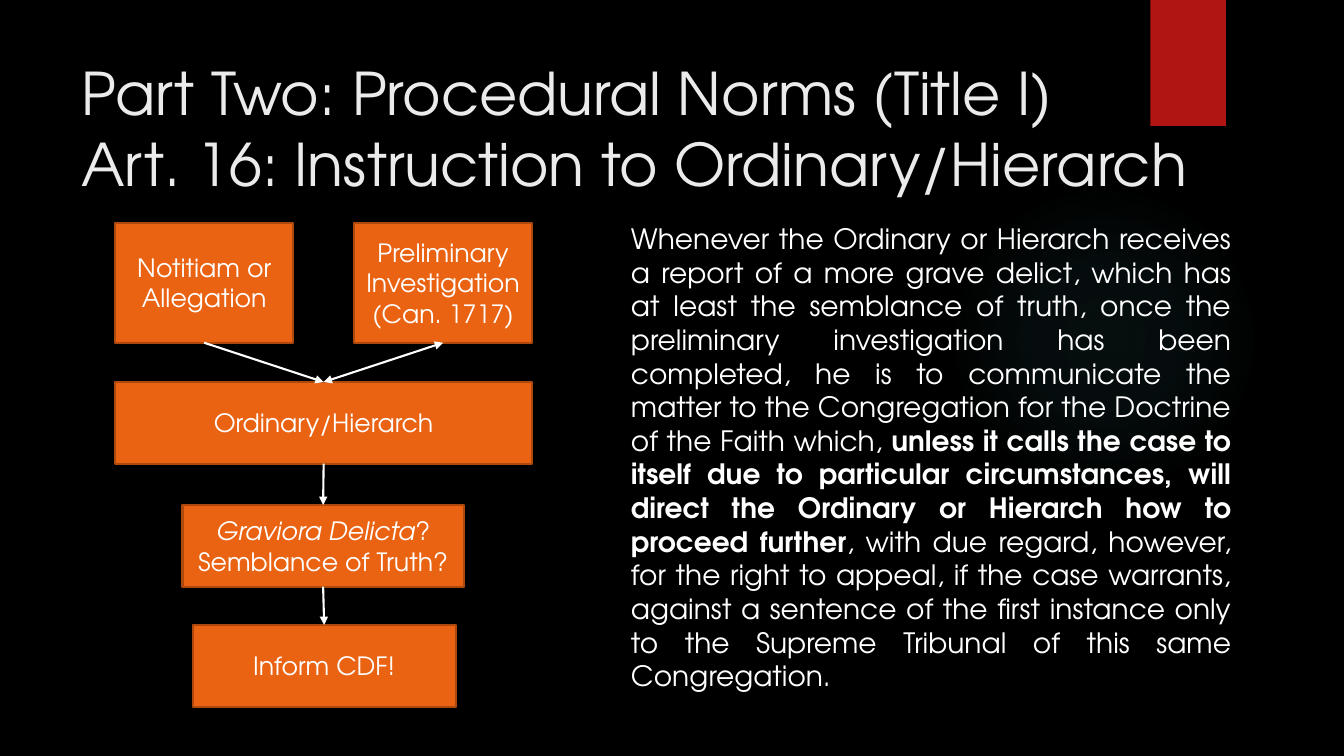
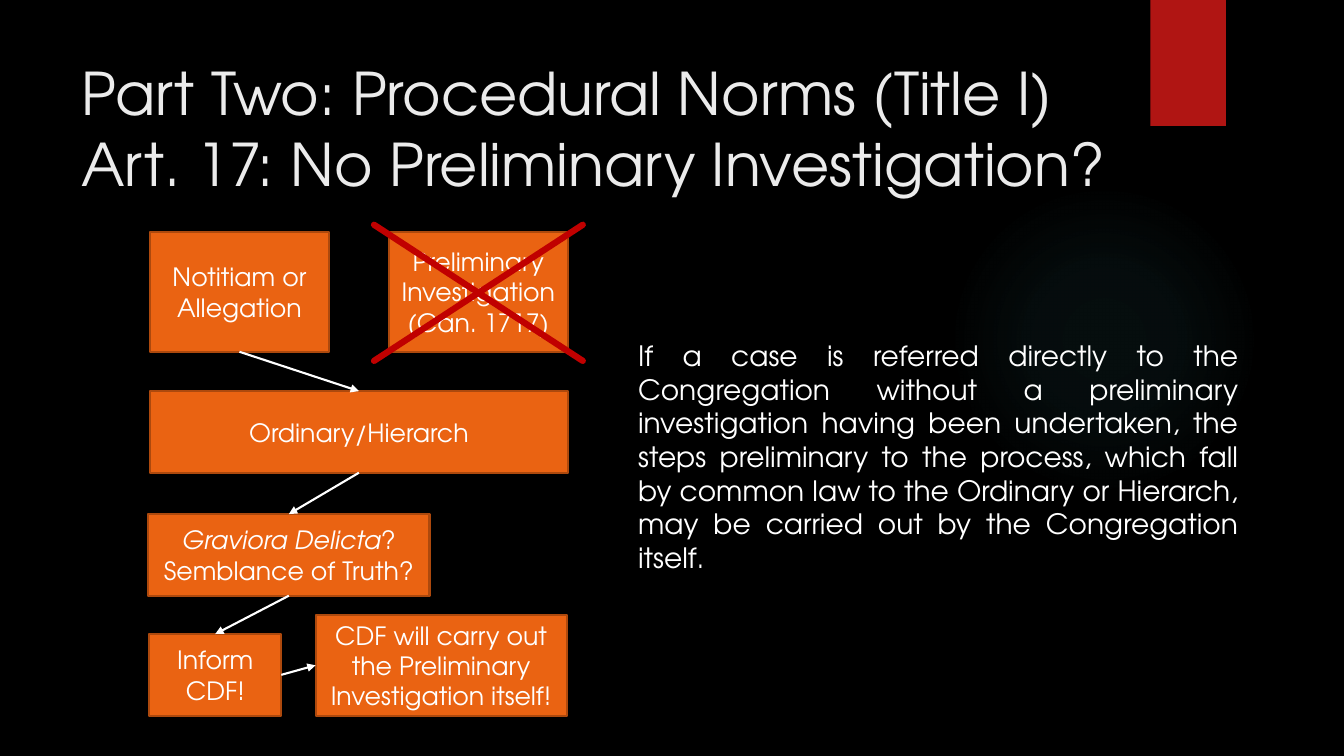
from lxml import etree
from pptx import Presentation
from pptx.dml.color import RGBColor
from pptx.enum.shapes import MSO_CONNECTOR as Link, MSO_SHAPE as Shape
from pptx.enum.text import MSO_ANCHOR as Anchor, PP_ALIGN as Align
from pptx.oxml import parse_xml
from pptx.oxml.ns import nsdecls, qn
from pptx.util import Inches, Pt

FONT = "TeX Gyre Adventor"
COLORS = {"ground": "000000", "glow": "50B9C1", "ribbon": "B01513", "title": "EBEBEB",
          "text": "FFFFFF", "box": "EA6312", "edge": "AD490D", "cross": "C00000"}
GLOW_STOPS = [(0, 7), (36, 6), (69, 0)]

PART = "Part Two: Procedural Norms (Title I)"
WIDE, HALF, TALL, LOW = 4.14, 1.77, 1.19, 0.81
ROWS = [0, 1.58, 2.8, 3.99]
SHARED_BOXES = {
    "report": ((0, ROWS[0], HALF, TALL), [[("Notitiam or Allegation", "")]]),
    "inquiry": ((WIDE - HALF, ROWS[0], HALF, TALL),
                [[("Preliminary Investigation (Can. 1717)", "")]]),
    "ordinary": ((0, ROWS[1], WIDE, LOW), [[("Ordinary/Hierarch", "")]]),
}
QUESTION = [[("Graviora Delicta", "i"), ("?", "")], [("Semblance of Truth?", "")]]
INFORM = [[("Inform CDF!", "")]]
TOP, LEFT, BOTTOM, RIGHT = range(4)

SLIDES = [
    {"title": "Art. 16: Instruction to Ordinary/Hierarch",
     "origin": (1.14, 2.21),
     "boxes": {"question": ((0.67, ROWS[2], 2.79, LOW), QUESTION),
               "inform": ((0.77, ROWS[3], 2.61, LOW), INFORM)},
     "arrows": [("question", BOTTOM, "inform", TOP, False),
                ("ordinary", BOTTOM, "question", TOP, False),
                ("report", BOTTOM, "ordinary", TOP, False),
                ("inquiry", BOTTOM, "ordinary", TOP, True)],
     "crossed": [],
     "norm_at": (6.16, 2.15, 6.15, 5.29),
     "norm": [("Whenever the Ordinary or Hierarch receives a report of a more grave delict, "
               "which has at least the semblance of truth, once the preliminary investigation "
               "has been completed, he is to communicate the matter to the Congregation for "
               "the Doctrine of the Faith which, ", ""),
              ("unless it calls the case to itself due to particular circumstances, will "
               "direct the Ordinary or Hierarch how to proceed further", "b"),
              (", with due regard, however, for the right to appeal, if the case warrants, "
               "against a sentence of the first instance only to the Supreme Tribunal of "
               "this same Congregation.", "")]},
    {"title": "Art. 17: No Preliminary Investigation?",
     "origin": (1.49, 2.3),
     "boxes": {"question": ((-0.02, ROWS[2], 2.79, LOW), QUESTION),
               "inform": ((-0.01, ROWS[3], 1.31, LOW), INFORM),
               "takeover": ((1.64, 3.8, 2.49, 1),
                            [[("CDF will carry out the Preliminary Investigation itself!", "")]])},
     "arrows": [("question", BOTTOM, "inform", TOP, False),
                ("ordinary", BOTTOM, "question", TOP, False),
                ("report", BOTTOM, "ordinary", TOP, False),
                ("inform", RIGHT, "takeover", LEFT, False)],
     "crossed": ["inquiry"],
     "norm_at": (6.23, 3.31, 6.15, 2.54),
     "norm": [("If a case is referred directly to the Congregation without a preliminary "
               "investigation having been undertaken, the steps preliminary to the process, "
               "which fall by common law to the Ordinary or Hierarch, may be carried out by "
               "the Congregation itself.", "")]},
]


def rgb(name):
    return RGBColor.from_string(COLORS[name])


def write(holder, paragraphs, size, color="text", align=Align.LEFT, anchor=Anchor.TOP):
    frame = holder.text_frame
    frame.word_wrap = True
    frame.vertical_anchor = anchor
    for index, pieces in enumerate(paragraphs):
        paragraph = frame.paragraphs[0] if index == 0 else frame.add_paragraph()
        paragraph.alignment = align
        for words, style in pieces:
            for part, line in enumerate(words.split("\n")):
                if part:
                    paragraph.add_line_break()
                run = paragraph.add_run()
                run.text = line
                run.font.name, run.font.size = FONT, Pt(size)
                run.font.bold, run.font.italic = style == "b", style == "i"
                run.font.color.rgb = rgb(color)


def add_block(slide, at, fill, kind=Shape.RECTANGLE, edge=None):
    block = slide.shapes.add_shape(kind, *map(Inches, at))
    block.shadow.inherit = False
    block.fill.solid()
    block.fill.fore_color.rgb = rgb(fill)
    if edge:
        block.line.color.rgb = rgb(edge)
        block.line.width = Pt(1.5)
    else:
        block.line.fill.background()
    return block


def add_line(slide, color, width, ends=(0, 0, 0, 0)):
    line = slide.shapes.add_connector(Link.STRAIGHT, *map(Inches, ends))
    line.line.color.rgb = rgb(color)
    line.line.width = Pt(width)
    etree.SubElement(line._element.spPr, qn("a:effectLst"))
    return line


def add_arrow(slide, source, source_side, target, target_side, both_ways):
    arrow = add_line(slide, "text", 1.5)
    arrow.begin_connect(source, source_side)
    arrow.end_connect(target, target_side)
    for tag in (["a:headEnd"] if both_ways else []) + ["a:tailEnd"]:
        etree.SubElement(arrow.line._get_or_add_ln(), qn(tag), type="triangle")


def add_cross(slide, at):
    x, y, width, height = at
    left, right = x - 0.15, x + width + 0.15
    top, bottom = y - 0.07, y + height + 0.09
    for ends in ((right, bottom, left, top), (right, top, left, bottom)):
        stroke = add_line(slide, "cross", 4.5, ends)
        stroke.line._get_or_add_ln().set("cap", "rnd")


def add_glow(slide):
    glow = add_block(slide, (9.41, 1.83, 3.08, 3.08), "glow", Shape.OVAL)
    stops = "".join(
        f'<a:gs pos="{place * 1000}"><a:srgbClr val="{COLORS["glow"]}">'
        f'<a:alpha val="{alpha * 1000}"/></a:srgbClr></a:gs>' for place, alpha in GLOW_STOPS)
    gradient = parse_xml(
        f'<a:gradFill {nsdecls("a")} rotWithShape="1"><a:gsLst>{stops}</a:gsLst>'
        '<a:path path="circle"><a:fillToRect l="50000" t="50000" r="50000" b="50000"/>'
        '</a:path></a:gradFill>')
    properties = glow._element.spPr
    properties.replace(properties.find(qn("a:solidFill")), gradient)


def add_base(deck, title):
    slide = deck.slides.add_slide(deck.slide_layouts[6])
    slide.background.fill.solid()
    slide.background.fill.fore_color.rgb = rgb("ground")
    add_glow(slide)
    add_block(slide, (11.41, 0, 0.75, 1.25), "ribbon")
    heading = slide.shapes.add_textbox(*map(Inches, (0.71, 0.5, 12, 1.53)))
    write(heading, [[(f"{PART}\n{title}", "")]], 42, "title", anchor=Anchor.MIDDLE)
    return slide


def add_article(deck, article):
    slide = add_base(deck, article["title"])
    norm = slide.shapes.add_textbox(*map(Inches, article["norm_at"]))
    write(norm, [article["norm"]], 20, align=Align.JUSTIFY)
    left, top = article["origin"]
    places, steps = {}, {}
    for key, ((x, y, width, height), words) in (SHARED_BOXES | article["boxes"]).items():
        places[key] = (left + x, top + y, width, height)
        steps[key] = add_block(slide, places[key], "box", edge="edge")
        write(steps[key], words, 18, align=Align.CENTER, anchor=Anchor.MIDDLE)
    for source, source_side, target, target_side, both_ways in article["arrows"]:
        add_arrow(slide, steps[source], source_side, steps[target], target_side, both_ways)
    for key in article["crossed"]:
        add_cross(slide, places[key])


def main():
    deck = Presentation()
    deck.slide_width, deck.slide_height = Inches(13.33), Inches(7.5)
    for article in SLIDES:
        add_article(deck, article)
    deck.save("out.pptx")


if __name__ == "__main__":
    main()
